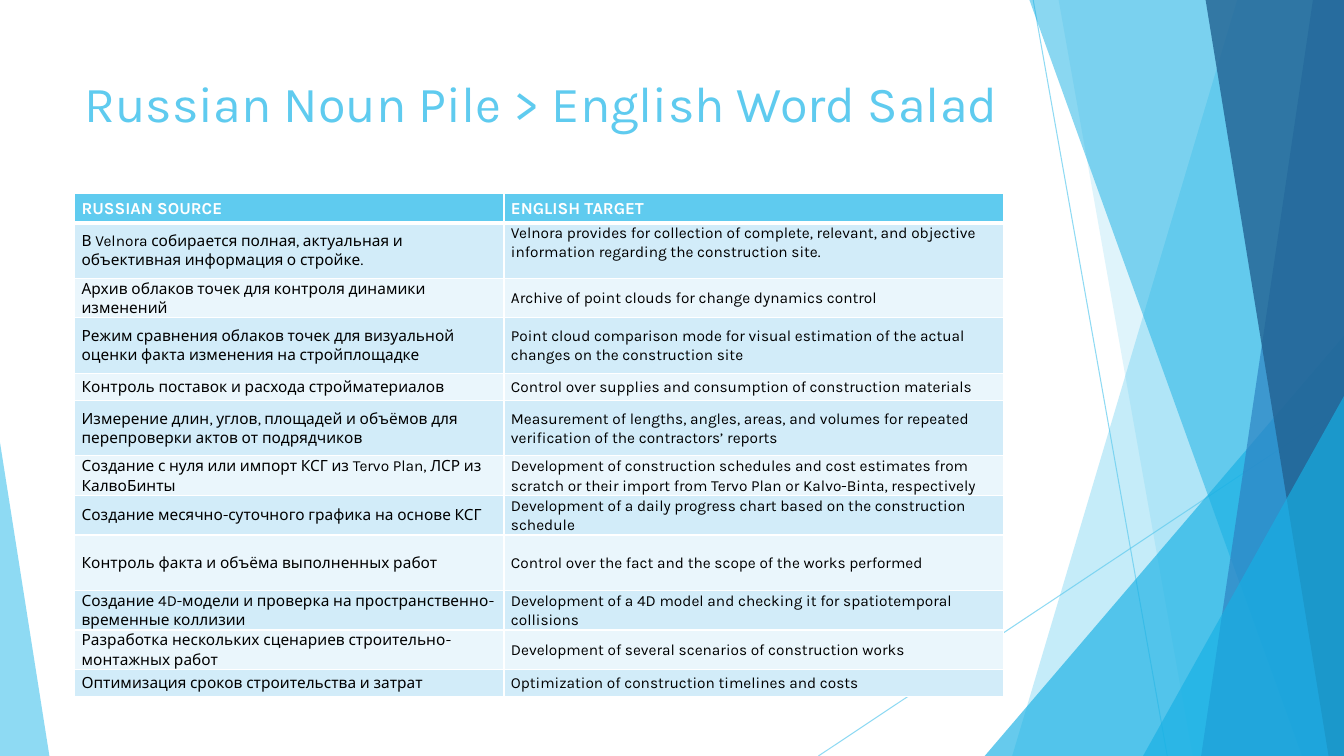
from lxml import etree
from pptx import Presentation
from pptx.dml.color import RGBColor
from pptx.enum import shapes, text
from pptx.oxml import ns
from pptx.util import Pt

COLORS = {
    "sky": "5FCBEF", "cyan": "17B0E4", "blue": "2E83C3", "navy": "226292",
    "band": "D2ECF9", "pale": "EAF6FC", "white": "FFFFFF", "black": "000000",
}
FONT = "Karla"
WIDTH, HEIGHT = 960, 540


def paint(fill, color, opacity=100):
    """Fill solidly, at a given opacity in percent."""
    fill.solid()
    fill.fore_color.rgb = RGBColor.from_string(COLORS[color])
    if opacity < 100:
        tint = fill._xPr.find(".//" + ns.qn("a:srgbClr"))
        etree.SubElement(tint, ns.qn("a:alpha"), val=str(opacity * 1000))


def add_border(cell, side, width):
    """Draw a white border on one side of a cell (L, R, T or B)."""
    border = etree.SubElement(cell._tc.get_or_add_tcPr(), ns.qn("a:ln" + side), w=str(Pt(width)))
    fill = etree.SubElement(border, ns.qn("a:solidFill"))
    etree.SubElement(fill, ns.qn("a:srgbClr"), val=COLORS["white"])


deck = Presentation()
deck.slide_width, deck.slide_height = Pt(WIDTH), Pt(HEIGHT)
page = deck.slides.add_slide(deck.slide_layouts[6])

# Thin crossing lines
for ends in [(738, 0, 833.8, HEIGHT), (WIDTH, 290.2, 584.6, HEIGHT)]:
    ray = page.shapes.add_connector(shapes.MSO_CONNECTOR.STRAIGHT, *map(Pt, ends))
    ray.line.width = Pt(0.75)
    paint(ray.line.fill, "sky", 70)
    etree.SubElement(ray._element.spPr, ns.qn("a:effectLst"))

# Facets: shards give top-left and bottom-left x, triangles a box and apex position
facets = [
    ("shard", (884.2, 722.9), "sky", 36),
    ("shard", (756, 851.8), "sky", 20),
    ("triangle", (703.4, 239.8, 256.6, 300.2, 1), "cyan", 66),
    ("shard", (735.1, 929.5), "cyan", 50),
    ("shard", (938.2, 858.2), "blue", 70),
    ("shard", (861.1, 949), "navy", 80),
    ("triangle", (816.5, 283, 143.5, 257, 1), "cyan", 66),
    ("triangle", (0, 316.1, 35.3, 223.9, 0), "sky", 70),
]
for kind, geometry, color, opacity in facets:
    if kind == "shard":
        top_x, bottom_x = geometry
        outline = page.shapes.build_freeform(top_x, -0.6, scale=Pt(1))
        outline.add_line_segments([(WIDTH, -0.6), (WIDTH, HEIGHT), (bottom_x, HEIGHT)])
        facet = outline.convert_to_shape()
    else:
        *bounds, apex = geometry
        facet = page.shapes.add_shape(shapes.MSO_SHAPE.ISOSCELES_TRIANGLE, *map(Pt, bounds))
        facet.adjustments[0] = apex
    paint(facet.fill, color, opacity)
    facet.line.fill.background()
    facet.shadow.inherit = False

# Title
title = page.shapes.add_textbox(Pt(53.3), Pt(48.2), Pt(676.8), Pt(50.4))
title.text_frame.word_wrap = True
para = title.text_frame.paragraphs[0]
para.text = "Russian Noun Pile > English Word Salad"
para.font.name, para.font.size = FONT, Pt(36)
para.font.color.rgb = RGBColor.from_string(COLORS["sky"])

# Table: row height, source, target
LOW, TALL = 19.4, 39.6
rows = [
    (21, "RUSSIAN SOURCE", "ENGLISH TARGET"),
    (TALL, "В Velnora собирается полная, актуальная и объективная информация о стройке.",
     "Velnora provides for collection of complete, relevant, and objective information "
     "regarding the construction site."),
    (LOW, "Архив облаков точек для контроля динамики изменений",
     "Archive of point clouds for change dynamics control"),
    (TALL, "Режим сравнения облаков точек для визуальной оценки факта изменения на стройплощадке",
     "Point cloud comparison mode for visual estimation of the actual changes "
     "on the construction site"),
    (LOW, "Контроль поставок и расхода стройматериалов",
     "Control over supplies and consumption of construction materials"),
    (TALL, "Измерение длин, углов, площадей и объёмов для перепроверки актов от подрядчиков",
     "Measurement of lengths, angles, areas, and volumes for repeated verification "
     "of the contractors’ reports"),
    (LOW, "Создание с нуля или импорт КСГ из Tervo Plan, ЛСР из КалвоБинты",
     "Development of construction schedules and cost estimates from scratch or their import "
     "from Tervo Plan or Kalvo-Binta, respectively"),
    (LOW, "Создание месячно-суточного графика на основе КСГ",
     "Development of a daily progress chart based on the construction schedule"),
    (TALL, "Контроль факта и объёма выполненных работ",
     "Control over the fact and the scope of the works performed"),
    (LOW, "Создание 4D-модели и проверка на пространственно-временные коллизии",
     "Development of a 4D model and checking it for spatiotemporal collisions"),
    (LOW, "Разработка нескольких сценариев строительно-монтажных работ",
     "Development of several scenarios of construction works"),
    (LOW, "Оптимизация сроков строительства и затрат",
     "Optimization of construction timelines and costs"),
]
column_widths = [306.7, 357.1]
table = page.shapes.add_table(
    len(rows), len(column_widths), Pt(53.3), Pt(138.2),
    Pt(sum(column_widths)), Pt(sum(row[0] for row in rows))).table
for column, width in zip(table.columns, column_widths):
    column.width = Pt(width)

for r, (height, *wordings) in enumerate(rows):
    table.rows[r].height = Pt(height)
    header = r == 0
    for c, wording in enumerate(wordings):
        cell = table.cell(r, c)
        cell.margin_left = cell.margin_right = Pt(5)
        cell.margin_top = cell.margin_bottom = 0
        top_aligned = (r, c) == (1, 1)
        cell.vertical_anchor = text.MSO_ANCHOR.TOP if top_aligned else text.MSO_ANCHOR.MIDDLE
        for side in "LRTB":
            thick = (header and side == "B") or (r == 1 and side == "T")
            add_border(cell, side, 3 if thick else 1)
        paint(cell.fill, "sky" if header else "band" if r % 2 else "pale")
        para = cell.text_frame.paragraphs[0]
        para.text = wording
        para.line_spacing = 1.07
        para.font.name, para.font.size = FONT, Pt(12 if header else 11)
        para.font.bold = header
        para.font.color.rgb = RGBColor.from_string(COLORS["white" if header else "black"])

deck.save("out.pptx")
